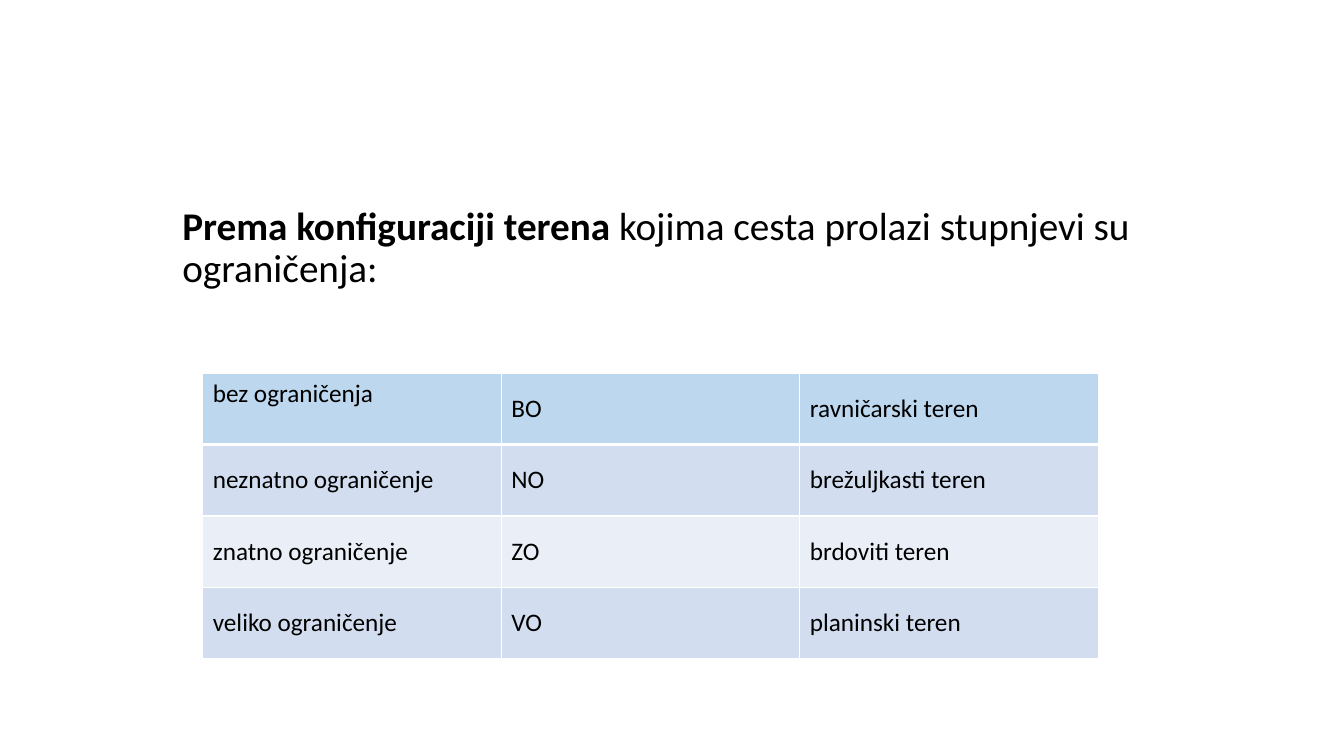
from lxml.etree import SubElement
from pptx import Presentation
from pptx.dml.color import RGBColor
from pptx.enum.text import MSO_ANCHOR as Anchor, MSO_AUTO_SIZE as AutoSize, PP_ALIGN as Align
from pptx.oxml.ns import qn
from pptx.util import Cm, Pt

FONT = "Calibri"
BLACK, WHITE = "000000", "FFFFFF"
HEADER_FILL = "BDD7EE"
BAND_FILLS = ("D2DEEF", "EAEFF7")
TERRAIN_LIMITS = [
    ("bez ograničenja", "BO", "ravničarski teren"),
    ("neznatno ograničenje", "NO", "brežuljkasti teren"),
    ("znatno ograničenje", "ZO", "brdoviti teren"),
    ("veliko ograničenje", "VO", "planinski teren"),
]


def color(hex_string):
    return RGBColor.from_string(hex_string)


def add_run(paragraph, text, size, bold=False):
    run = paragraph.add_run()
    run.text = text
    run.font.name = FONT
    run.font.size = Pt(size)
    run.font.bold = bold
    run.font.color.rgb = color(BLACK)


def add_intro(slide):
    intro = slide.placeholders[1]
    intro.left, intro.top = Cm(4.34), Cm(5.08)
    intro.width, intro.height = Cm(27.2), Cm(12.09)
    frame = intro.text_frame
    frame.word_wrap = True
    frame.auto_size = AutoSize.NONE
    frame.vertical_anchor = Anchor.TOP

    sentence = frame.paragraphs[0]
    properties = sentence._p.get_or_add_pPr()
    properties.set("marL", "0")
    properties.set("indent", "0")
    SubElement(properties, qn("a:buNone"))
    sentence.alignment = Align.LEFT
    sentence.line_spacing = 0.9
    sentence.space_before = Pt(0)
    add_run(sentence, "Prema konfiguraciji terena ", 28, bold=True)
    add_run(sentence, "kojima cesta prolazi stupnjevi su ograničenja:", 28)


def set_border(cell, side, width):
    line = SubElement(cell._tc.get_or_add_tcPr(), qn(f"a:ln{side}"), w=str(Pt(width)))
    fill = SubElement(line, qn("a:solidFill"))
    SubElement(fill, qn("a:srgbClr"), val=WHITE)


def format_cell(cell, text, row):
    for side in "LRTB":
        header_rule = (row, side) in ((0, "B"), (1, "T"))
        set_border(cell, side, 3 if header_rule else 1)
    cell.fill.solid()
    cell.fill.fore_color.rgb = color(BAND_FILLS[(row - 1) % 2] if row else HEADER_FILL)
    cell.vertical_anchor = Anchor.MIDDLE
    add_run(cell.text_frame.paragraphs[0], text, 18)


def add_limits_table(slide):
    rows, columns = len(TERRAIN_LIMITS), len(TERRAIN_LIMITS[0])
    frame = slide.shapes.add_table(rows, columns, Cm(5.11), Cm(9.4), Cm(22.57), Cm(7.2))
    limits = frame.table
    for row, texts in enumerate(TERRAIN_LIMITS):
        for column, text in enumerate(texts):
            format_cell(limits.cell(row, column), text, row)
    limits.cell(0, 0).vertical_anchor = Anchor.TOP


def main():
    deck = Presentation()
    deck.slide_width, deck.slide_height = Cm(33.87), Cm(19.05)
    slide = deck.slides.add_slide(deck.slide_layouts[1])
    title = slide.shapes.title.element
    title.getparent().remove(title)
    add_intro(slide)
    add_limits_table(slide)
    deck.save("out.pptx")


if __name__ == "__main__":
    main()
